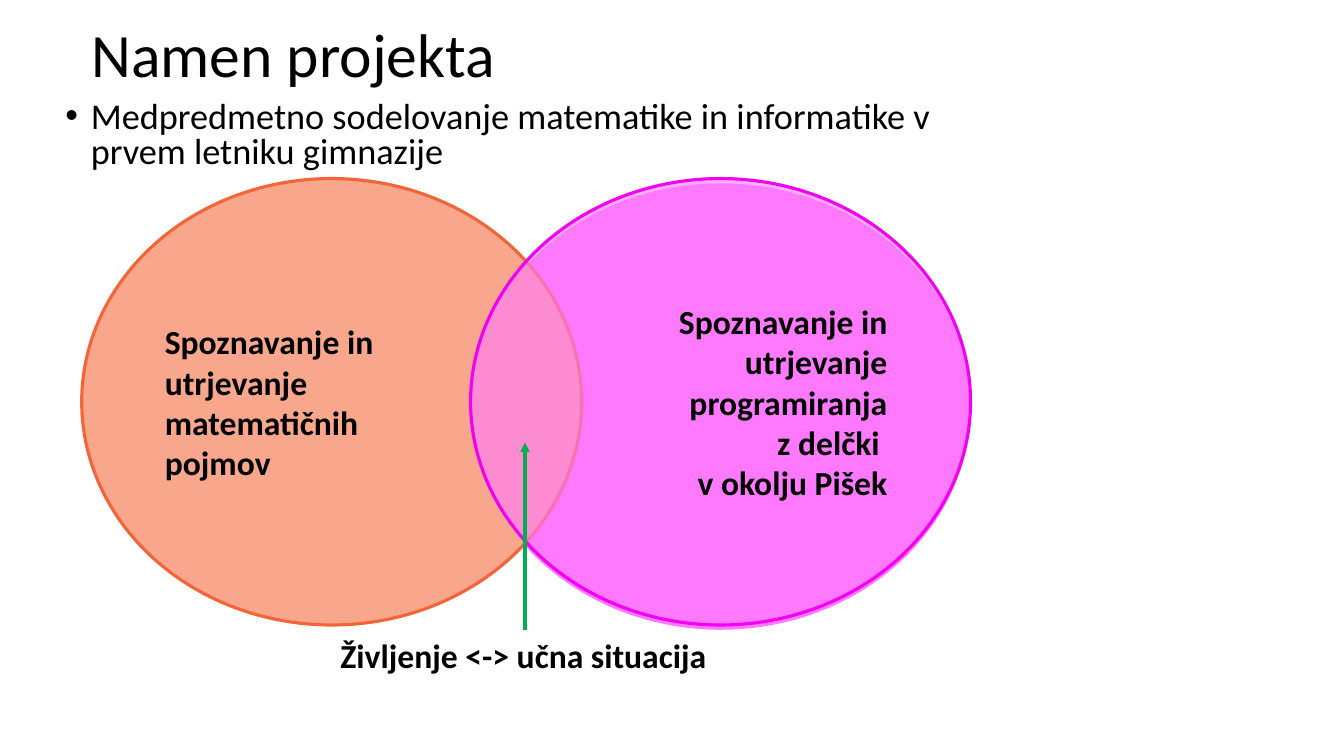
from lxml import etree
from pptx import Presentation
from pptx import util as u
from pptx.dml import color
from pptx.enum import shapes, text
from pptx.oxml import ns


class VennSlide:
    """Draws text, ellipses and arrows in one style on the current slide."""

    COLOURS = {
        "text": "000000",
        "maths": "F8A68C",
        "maths_edge": "F36539",
        "coding": "FF79FF",
        "coding_edge": "F200F2",
        "arrow": "00B050",
    }
    FONT = "Calibri"
    LINE_WIDTH = u.Pt(2.25)

    def __init__(self, presentation):
        self.slide = presentation.slides.add_slide(presentation.slide_layouts[6])

    def colour(self, name):
        return color.RGBColor.from_string(self.COLOURS[name])

    def child(self, parent, tag, **attributes):
        return etree.SubElement(parent, ns.qn(tag), attributes)

    def fill_text(self, shape, lines, size, bold=False, bullet=False,
                  anchor=text.MSO_ANCHOR.TOP, **paragraph_format):
        frame = shape.text_frame
        frame.word_wrap = True
        frame.vertical_anchor = anchor
        frame.text = "\n".join(lines)
        paragraph_format.setdefault("alignment", text.PP_ALIGN.LEFT)
        font_format = {"name": self.FONT, "size": u.Pt(size), "bold": bold}
        for paragraph in frame.paragraphs:
            for key, value in paragraph_format.items():
                setattr(paragraph, key, value)
            if bullet:
                properties = paragraph._p.get_or_add_pPr()
                properties.set("marL", str(u.Cm(0.64)))
                properties.set("indent", str(u.Cm(-0.64)))
                self.child(properties, "a:buFont", typeface="Arial")
                self.child(properties, "a:buChar", char="•")
            for run in paragraph.runs:
                for key, value in font_format.items():
                    setattr(run.font, key, value)
                run.font.color.rgb = self.colour("text")

    def text_box(self, box, lines, size, **options):
        shape = self.slide.shapes.add_textbox(*map(u.Cm, box))
        self.fill_text(shape, lines, size, **options)

    def ellipse(self, left, top, fill, edge=None, opacity=100):
        shape = self.slide.shapes.add_shape(
            shapes.MSO_SHAPE.OVAL, *map(u.Cm, (left, top, 12.6, 11.25)))
        shape.shadow.inherit = False
        shape.fill.solid()
        shape.fill.fore_color.rgb = self.colour(fill)
        if opacity < 100:
            fill_colour = shape._element.spPr.find(".//" + ns.qn("a:srgbClr"))
            self.child(fill_colour, "a:alpha", val=str(opacity * 1000))
        if edge:
            shape.line.color.rgb = self.colour(edge)
            shape.line.width = self.LINE_WIDTH
        else:
            shape.line.fill.background()
        return shape

    def arrow(self, x, start, end):
        connector = self.slide.shapes.add_connector(
            shapes.MSO_CONNECTOR.STRAIGHT, *map(u.Cm, (x, start, x, end)))
        connector.line.color.rgb = self.colour("arrow")
        connector.line.width = self.LINE_WIDTH
        properties = connector._element.spPr
        self.child(properties.find(ns.qn("a:ln")), "a:tailEnd", type="triangle")
        self.child(properties, "a:effectLst")


def main():
    presentation = Presentation()
    presentation.slide_width = u.Cm(33.87)
    presentation.slide_height = u.Cm(19.05)
    venn = VennSlide(presentation)
    middle = text.MSO_ANCHOR.MIDDLE
    maths_left, coding_left, top = 2.06, 11.86, 4.5

    venn.ellipse(coding_left, top + 0.12, "coding")
    venn.text_box((maths_left, 0, 21.84, 2.92), ["Namen projekta"], 44,
                  anchor=middle, line_spacing=0.9)
    venn.text_box(
        (1.4, 2.44, 23.44, 2.06),
        ["Medpredmetno sodelovanje matematike in informatike v prvem letniku gimnazije"],
        25.9, bullet=True, line_spacing=0.8)

    maths = venn.ellipse(maths_left, top, "maths", "maths_edge")
    venn.fill_text(maths, ["Spoznavanje in utrjevanje matematičnih", "pojmov"],
                   24, bold=True, anchor=middle)
    coding = venn.ellipse(coding_left, top, "coding", "coding_edge", opacity=60)
    venn.fill_text(coding,
                   ["Spoznavanje in utrjevanje programiranja", " z delčki ", "v okolju Pišek"],
                   24, bold=True, anchor=middle, alignment=text.PP_ALIGN.RIGHT)

    venn.text_box((8.33, 15.88, 9.8, 1.27), ["Življenje <-> učna situacija"], 24, bold=True)
    venn.arrow(13.23, 15.88, 11.15)
    presentation.save("out.pptx")


if __name__ == "__main__":
    main()
